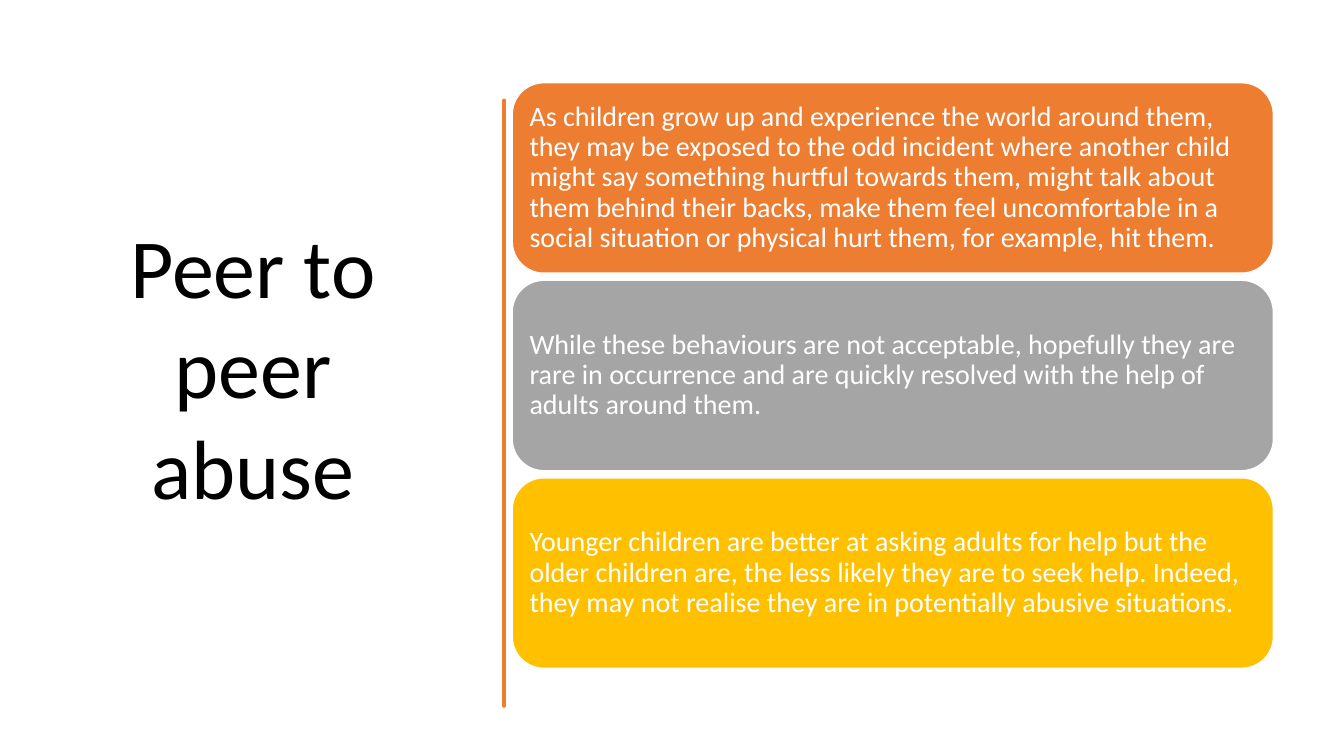
from typing import NamedTuple

from pptx import Presentation
from pptx.dml.color import RGBColor
from pptx.enum.shapes import MSO_SHAPE as Preset
from pptx.enum.text import MSO_ANCHOR as Anchor, MSO_AUTO_SIZE as AutoSize, PP_ALIGN as Align
from pptx.shapes.autoshape import Shape
from pptx.slide import Slide
from pptx.util import Inches, Pt

ORANGE = RGBColor(0xED, 0x7D, 0x31)
GREY = RGBColor(0xA5, 0xA5, 0xA5)
GOLD = RGBColor(0xFF, 0xC0, 0x00)
WHITE = RGBColor(0xFF, 0xFF, 0xFF)
BLACK = RGBColor(0x00, 0x00, 0x00)
FONT = "Calibri"

CARD_LEFT, CARD_TOP = 5.08, 0.82
CARD_WIDTH, CARD_HEIGHT, CARD_STEP = 7.55, 1.89, 1.96
CURVE_STEPS = 6


class Card(NamedTuple):
    text: str
    color: RGBColor


class Curve(NamedTuple):
    """Cubic curve: two control points, then the end point."""
    x1: float
    y1: float
    x2: float
    y2: float
    x: float
    y: float


CARDS = [
    Card("As children grow up and experience the world around them, they may be exposed to the odd "
         "incident where another child might say something hurtful towards them, might talk about "
         "them behind their backs, make them feel uncomfortable in a social situation or physical "
         "hurt them, for example, hit them.", ORANGE),
    Card("While these behaviours are not acceptable, hopefully they are rare in occurrence and are "
         "quickly resolved with the help of adults around them.", GREY),
    Card("Younger children are better at asking adults for help but the older children are, the "
         "less likely they are to seek help. Indeed, they may not realise they are in potentially "
         "abusive situations.", GOLD),
]

# Hand-drawn divider: down the right edge, back up the left one
DIVIDER_START = (4.75, 0.84)
DIVIDER_STROKE = [
    Curve(4.77, 1.02, 4.77, 1.19, 4.75, 1.46),
    Curve(4.73, 1.73, 4.76, 1.95, 4.75, 2.26),
    Curve(4.74, 2.57, 4.75, 2.62, 4.75, 2.94),
    Curve(4.74, 3.25, 4.77, 3.42, 4.75, 3.56),
    Curve(4.73, 3.7, 4.79, 4.14, 4.75, 4.36),
    Curve(4.71, 4.57, 4.72, 4.84, 4.75, 5.1),
    Curve(4.77, 5.36, 4.77, 5.64, 4.75, 5.84),
    Curve(4.73, 6.03, 4.76, 6.5, 4.75, 6.76),
    Curve(4.74, 6.76, 4.73, 6.76, 4.73, 6.76),
    Curve(4.74, 6.46, 4.71, 6.44, 4.73, 6.13),
    Curve(4.74, 5.83, 4.74, 5.7, 4.73, 5.57),
    Curve(4.72, 5.44, 4.72, 4.95, 4.73, 4.77),
    Curve(4.73, 4.59, 4.71, 4.45, 4.73, 4.15),
    Curve(4.74, 3.86, 4.72, 3.73, 4.73, 3.35),
    Curve(4.74, 2.98, 4.72, 2.81, 4.73, 2.5),
    Curve(4.74, 2.18, 4.75, 2.0, 4.73, 1.81),
    Curve(4.7, 1.63, 4.77, 1.04, 4.73, 0.84),
]


def curve_points(start: tuple[float, float], curve: Curve) -> list[tuple[float, float]]:
    points = []
    for step in range(1, CURVE_STEPS + 1):
        t = step / CURVE_STEPS
        weights = ((1 - t) ** 3, 3 * t * (1 - t) ** 2, 3 * t * t * (1 - t), t ** 3)
        xs = (start[0], curve.x1, curve.x2, curve.x)
        ys = (start[1], curve.y1, curve.y2, curve.y)
        points.append((sum(w * x for w, x in zip(weights, xs)),
                       sum(w * y for w, y in zip(weights, ys))))
    return points


def draw_divider(slide: Slide) -> Shape:
    builder = slide.shapes.build_freeform(*DIVIDER_START, scale=Inches(1))
    start = DIVIDER_START
    for curve in DIVIDER_STROKE:
        builder.add_line_segments(curve_points(start, curve), close=False)
        start = (curve.x, curve.y)
    builder.add_line_segments([DIVIDER_START], close=True)
    divider = builder.convert_to_shape()
    divider.shadow.inherit = False
    divider.fill.solid()
    divider.fill.fore_color.rgb = ORANGE
    divider.line.color.rgb = ORANGE
    divider.line.width = Pt(3.25)
    return divider


def write_text(shape: Shape, text: str, size: int, color: RGBColor, align: Align) -> None:
    frame = shape.text_frame
    frame.text = text
    frame.word_wrap = True
    frame.auto_size = AutoSize.NONE
    frame.vertical_anchor = Anchor.MIDDLE
    paragraph = frame.paragraphs[0]
    paragraph.alignment = align
    font = paragraph.runs[0].font
    font.name, font.size, font.color.rgb = FONT, Pt(size), color


def draw_card(slide: Slide, card: Card, top: float) -> None:
    shape = slide.shapes.add_shape(Preset.ROUNDED_RECTANGLE, Inches(CARD_LEFT), Inches(top),
                                   Inches(CARD_WIDTH), Inches(CARD_HEIGHT))
    shape.shadow.inherit = False
    shape.fill.solid()
    shape.fill.fore_color.rgb = card.color
    shape.line.color.rgb = WHITE
    shape.line.width = Pt(1)
    write_text(shape, card.text, 20, WHITE, Align.LEFT)
    frame = shape.text_frame
    # The rounded corners already inset the text by about 0.09
    frame.margin_left = frame.margin_right = Inches(0.08)
    frame.margin_top = frame.margin_bottom = Inches(0.08)
    frame.paragraphs[0].line_spacing = 0.9


def main() -> None:
    presentation = Presentation()
    presentation.slide_width, presentation.slide_height = Inches(13.33), Inches(7.5)
    slide = presentation.slides.add_slide(presentation.slide_layouts[5])

    # Title on the left
    title = slide.shapes.title
    title.left, title.top = Inches(0.66), Inches(2.06)
    title.width, title.height = Inches(3.7), Inches(3.13)
    write_text(title, "Peer to peer abuse", 60, BLACK, Align.CENTER)

    # Divider and the stack of cards
    draw_divider(slide)
    for index, card in enumerate(CARDS):
        draw_card(slide, card, CARD_TOP + index * CARD_STEP)

    presentation.save("out.pptx")


if __name__ == "__main__":
    main()
